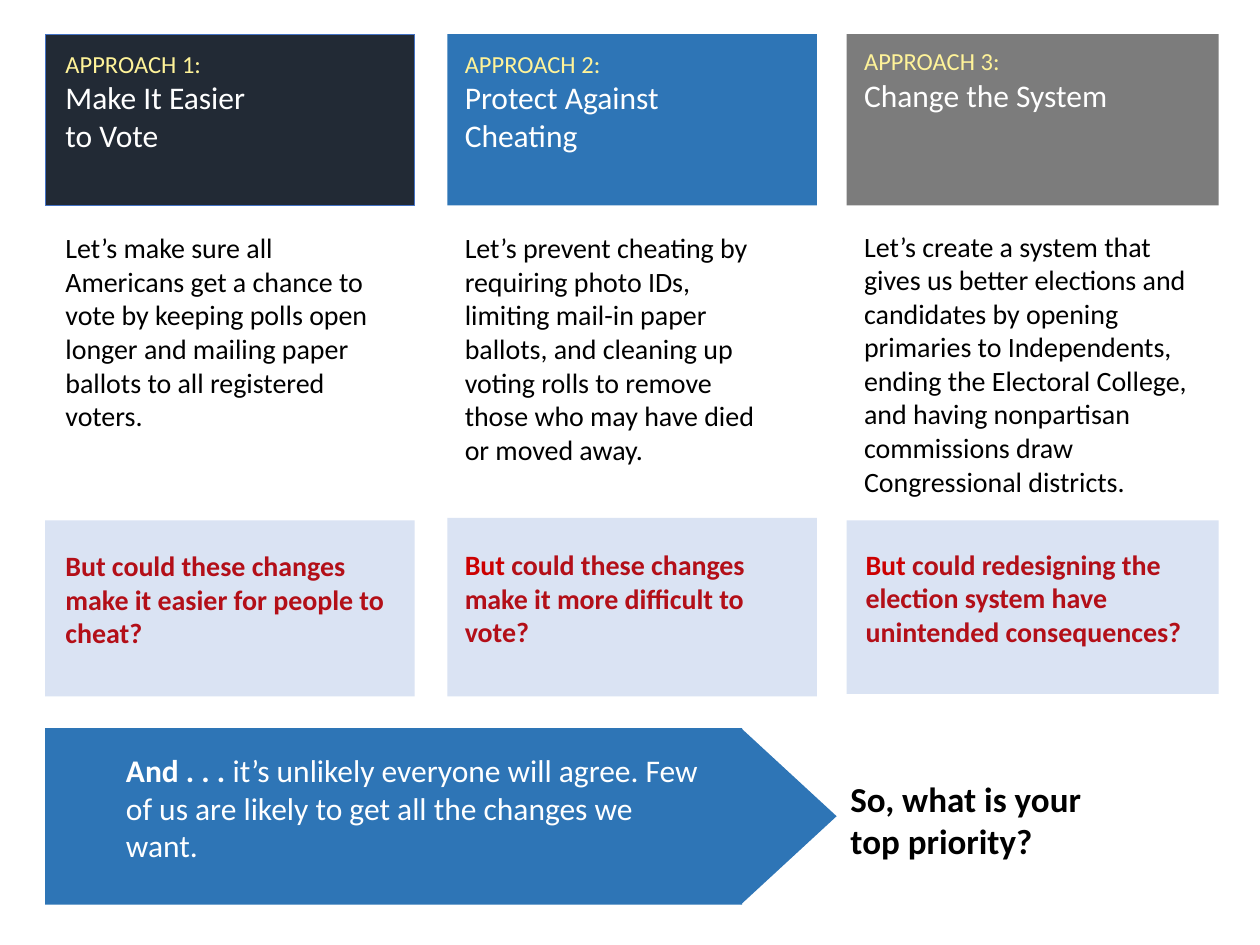
from pptx import Presentation
from pptx.dml.color import RGBColor as RGB
from pptx.enum.shapes import MSO_SHAPE as Kind
from pptx.enum.text import MSO_ANCHOR as Anchor, MSO_AUTO_SIZE as Fit, PP_ALIGN as Align
from pptx.util import Cm, Pt

NAVY = RGB(0x22, 0x2A, 0x35)
BLUE = RGB(0x2E, 0x75, 0xB6)
GRAY = RGB(0x7C, 0x7C, 0x7C)
PALE = RGB(0xDA, 0xE3, 0xF3)
EDGE = RGB(0x44, 0x72, 0xC4)
GOLD = RGB(0xFF, 0xF3, 0x99)
RED = RGB(0xCC, 0x00, 0x00)
DARK = RGB(0xB3, 0x0F, 0x18)
WHITE = RGB(0xFF, 0xFF, 0xFF)
BLACK = RGB(0x00, 0x00, 0x00)

deck = Presentation()
deck.slide_width, deck.slide_height = Cm(25.4), Cm(19.05)
slide = deck.slides.add_slide(deck.slide_layouts[5])


def block(kind, box, color, line=None):
    shape = slide.shapes.add_shape(kind, *map(Cm, box))
    shape.shadow.inherit = False
    shape.fill.solid()
    shape.fill.fore_color.rgb = color
    if line:
        shape.line.color.rgb = line
        shape.line.width = Pt(0.5)
    else:
        shape.line.fill.background()
    return shape


def write(paras, box, anchor=Anchor.TOP, gap=0, shape=None):
    """Fill a text box; paras are lists of (text, size, color, bold) runs.

    gap is the space in points before the last paragraph.
    """
    shape = shape or slide.shapes.add_textbox(0, 0, 0, 0)
    shape.left, shape.top, shape.width, shape.height = map(Cm, box)
    frame = shape.text_frame
    frame.word_wrap = True
    frame.auto_size = Fit.NONE
    frame.vertical_anchor = anchor
    for i, runs in enumerate(paras):
        para = frame.add_paragraph() if i else frame.paragraphs[0]
        para.alignment = Align.LEFT
        for j, (text, size, color, bold) in enumerate(runs):
            for k, part in enumerate(text.split("\n")):
                if k:
                    para.add_line_break()
                run = para.add_run()
                run.text = part
                font = run.font
                font.name, font.size, font.bold = "Calibri", Pt(size), bold
                font.color.rgb = color
    if gap:
        para.space_before = Pt(gap)


# Left, width, fill, line, heading, gap, body, question runs, text boxes
cols = [
    (0.91, 7.45, NAVY, EDGE, "Make It Easier \nto Vote", 44,
     "Let’s make sure all\nAmericans get a chance to vote by keeping polls open longer "
     "and mailing paper ballots to all registered voters.",
     [("But could these changes make it easier for people to cheat?", 16, DARK, True)],
     (1.07, 0.86, 6.76, 8.71), (10.49, 3.55), (1.07, 10.49, 7.01, 3.18)),
    (9.02, 7.45, BLUE, None, "Protect Against Cheating", 44,
     "Let’s prevent cheating by requiring photo IDs, limiting mail-in paper ballots, "
     "and cleaning up voting rolls to remove those who may have died or moved away.",
     [("But", 16, RED, True),
      (" could these changes make it more difficult to vote?", 16, DARK, True)],
     (9.12, 0.86, 6.81, 8.71), (10.44, 3.6), (9.12, 10.52, 7.37, 3.07)),
    (17.07, 7.5, GRAY, None, "Change the System", 66,
     "Let’s create a system that gives us better elections and candidates by opening "
     "primaries to Independents, ending the Electoral College, and having nonpartisan "
     "commissions draw Congressional districts.",
     [("But", 16, RED, True),
      (" could redesigning the election system have unintended consequences?", 16, DARK, True)],
     (17.17, 0.81, 7.19, 9.4), (10.49, 3.5), (17.2, 10.31, 7.19, 3.48)),
]
for num, col in enumerate(cols, 1):
    left, width, fill, line, head, gap, body, ask, main, band, foot = col
    block(Kind.RECTANGLE, (left, 0.69, width, 3.45), fill, line)
    block(Kind.RECTANGLE, (left, band[0], width, band[1]), PALE)
    write([[(f"APPROACH {num}:", 14, GOLD, False)],
           [(head, 18, WHITE, False)],
           [(body, 16, BLACK, False)]], main, gap=gap)
    write([ask], foot, anchor=Anchor.MIDDLE)

# Closing arrow
block(Kind.RECTANGLE, (0.91, 14.68, 14.05, 3.56), BLUE)
tip = block(Kind.ISOSCELES_TRIANGLE, (14.12, 15.49, 3.56, 1.93), BLUE)
tip.rotation = 90
write([[("And . . .", 18, WHITE, True),
        (" it’s unlikely everyone will agree. Few of us are likely to get "
         "all the changes we want.", 18, WHITE, False)]], (2.29, 15.01, 12.27, 3.33))
write([[("So, what is your \ntop priority?", 20, BLACK, True)]],
      (16.89, 15.54, 6.93, 1.96), shape=slide.shapes.title)

deck.save("out.pptx")
